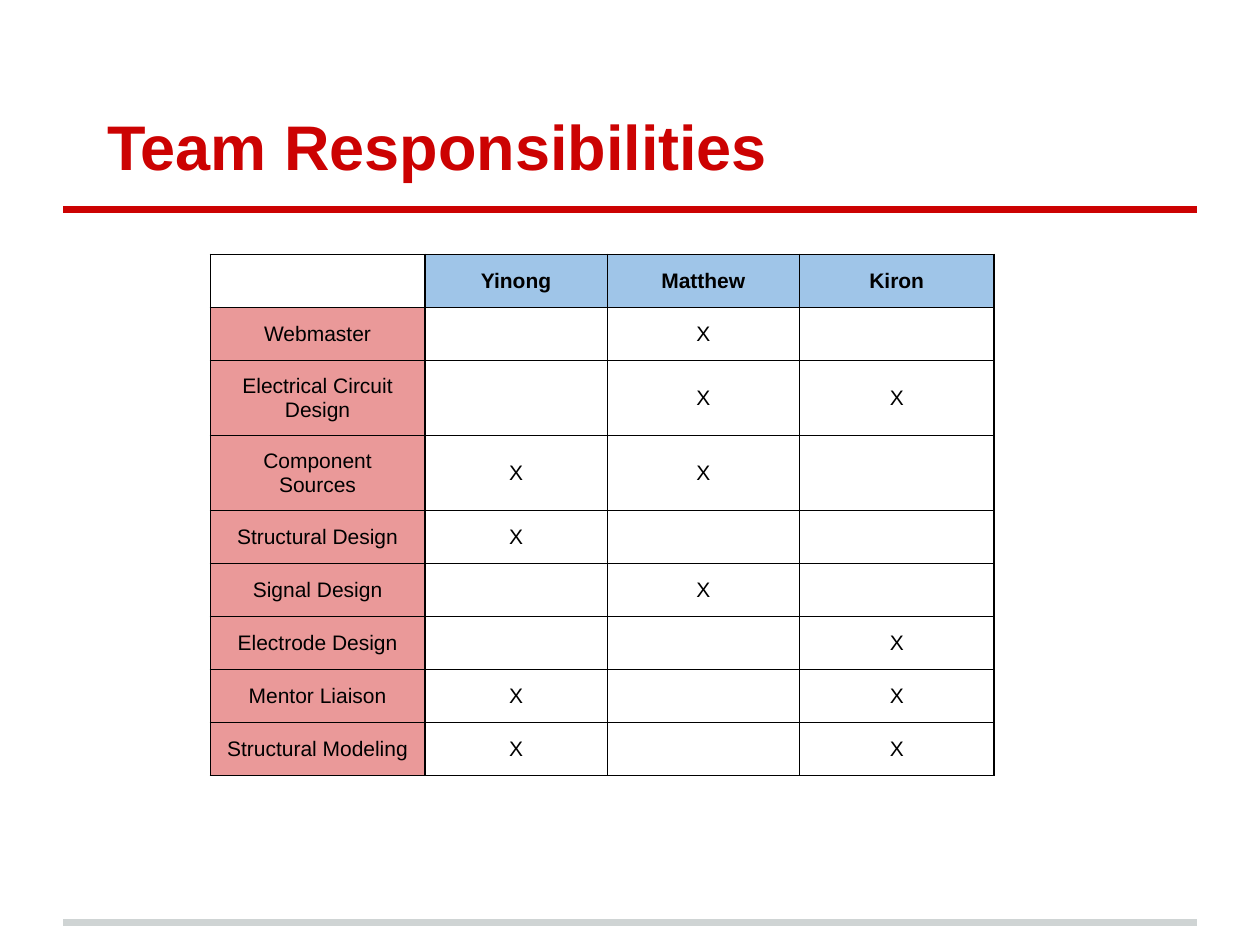
from dataclasses import dataclass

from lxml import etree
from pptx import Presentation
from pptx.dml.color import RGBColor
from pptx.enum.shapes import MSO_CONNECTOR
from pptx.enum.text import MSO_ANCHOR, MSO_AUTO_SIZE, PP_ALIGN
from pptx.oxml.ns import qn
from pptx.util import Pt

TITLE_ONLY = 5
STRAIGHT = MSO_CONNECTOR.STRAIGHT
MIDDLE, BOTTOM = MSO_ANCHOR.MIDDLE, MSO_ANCHOR.BOTTOM
LEFT, CENTER = PP_ALIGN.LEFT, PP_ALIGN.CENTER
NO_AUTOFIT = MSO_AUTO_SIZE.NONE


@dataclass(frozen=True)
class Theme:
    """Colours, font and type sizes of the slide."""
    accent: str = "CC0202"
    footer: str = "CFD4D4"
    text: str = "000000"
    paper: str = "FFFFFF"
    member: str = "9FC5E8"
    task: str = "EA9999"
    font: str = "Arial"
    title_size: int = 36
    cell_size: int = 12


THEME = Theme()
MEMBERS = ["Yinong", "Matthew", "Kiron"]
TASKS = [
    ("Webmaster", ["Matthew"]),
    ("Electrical Circuit Design", ["Matthew", "Kiron"]),
    ("Component Sources", ["Yinong", "Matthew"]),
    ("Structural Design", ["Yinong"]),
    ("Signal Design", ["Matthew"]),
    ("Electrode Design", ["Kiron"]),
    ("Mentor Liaison", ["Yinong", "Kiron"]),
    ("Structural Modeling", ["Yinong", "Kiron"]),
]
COL_WIDTHS = [122.6, 104.3, 109.7, 111.4]
ROW_HEIGHT, TALL_ROW_HEIGHT = 29.5, 42.9
TALL_ROWS = (2, 3)


def style_runs(p, size, color, bold):
    """Give the runs of a paragraph their font."""
    for r in p.runs:
        r.font.name = THEME.font
        r.font.size = Pt(size)
        r.font.bold = bold
        r.font.color.rgb = RGBColor.from_string(color)


def set_margins(box, margin):
    """Set the same inset on all four sides of a cell or text frame."""
    box.margin_left = box.margin_right = Pt(margin)
    box.margin_top = box.margin_bottom = Pt(margin)


def add_rule(slide, left, top, width, color):
    """Draw a thick horizontal rule."""
    line = slide.shapes.add_connector(
        STRAIGHT, Pt(left), Pt(top), Pt(left + width), Pt(top))
    line.line.color.rgb = RGBColor.from_string(color)
    line.line.width = Pt(4)
    etree.SubElement(line._element.spPr, qn("a:effectLst"))


def add_title(slide, left, top, width, height, text):
    """Place the title in its box."""
    sp = slide.shapes.title
    sp.left, sp.top, sp.width, sp.height = map(Pt, (left, top, width, height))
    tf = sp.text_frame
    tf.text = text
    tf.word_wrap = True
    tf.auto_size = NO_AUTOFIT
    tf.vertical_anchor = BOTTOM
    set_margins(tf, 7.2)
    p = tf.paragraphs[0]
    p.alignment = LEFT
    p._p.get_or_add_pPr().set("indent", str(Pt(18)))
    style_runs(p, THEME.title_size, THEME.accent, True)


def add_borders(cell):
    """Draw a thin line on each side of a cell."""
    tc_pr = cell._tc.get_or_add_tcPr()
    for i, side in enumerate(("lnL", "lnR", "lnT", "lnB")):
        ln = etree.Element(qn(f"a:{side}"), w=str(Pt(1)))
        fill = etree.SubElement(ln, qn("a:solidFill"))
        etree.SubElement(fill, qn("a:srgbClr"), val=THEME.text)
        tc_pr.insert(i, ln)


def fill_cell(cell, text, color, bold):
    """Write and format one table cell."""
    cell.text = text
    cell.vertical_anchor = MIDDLE
    set_margins(cell, 7.85)
    p = cell.text_frame.paragraphs[0]
    p.alignment = CENTER
    style_runs(p, THEME.cell_size, THEME.text, bold)
    if not text:
        etree.SubElement(p._p, qn("a:endParaRPr"), sz=str(THEME.cell_size * 100))
    cell.fill.solid()
    cell.fill.fore_color.rgb = RGBColor.from_string(color)
    add_borders(cell)


def add_responsibilities(slide, left, top, width, height):
    """Build the table of tasks and members."""
    rows = [["", *MEMBERS]]
    rows += [[task, *("X" if m in owners else "" for m in MEMBERS)]
             for task, owners in TASKS]
    table = slide.shapes.add_table(
        len(rows), len(COL_WIDTHS), Pt(left), Pt(top), Pt(width), Pt(height)).table
    table.first_row = table.horz_banding = False
    for col, col_width in zip(table.columns, COL_WIDTHS):
        col.width = Pt(col_width)
    for i, values in enumerate(rows):
        table.rows[i].height = Pt(TALL_ROW_HEIGHT if i in TALL_ROWS else ROW_HEIGHT)
        for j, text in enumerate(values):
            color = THEME.paper
            if i == 0 and j > 0:
                color = THEME.member
            elif i > 0 and j == 0:
                color = THEME.task
            fill_cell(table.cell(i, j), text, color, i == 0)


def main():
    """Build and save the slide."""
    prs = Presentation()
    prs.slide_width, prs.slide_height = Pt(720), Pt(540)
    slide = prs.slides.add_slide(prs.slide_layouts[TITLE_ONLY])
    add_rule(slide, 36, 527, 648, THEME.footer)
    add_rule(slide, 36, 120, 648, THEME.accent)
    add_title(slide, 36, 21.6, 648, 90, "Team Responsibilities")
    add_responsibilities(slide, 120.2, 145.4, 448, 292.3)
    prs.save("out.pptx")


if __name__ == "__main__":
    main()
